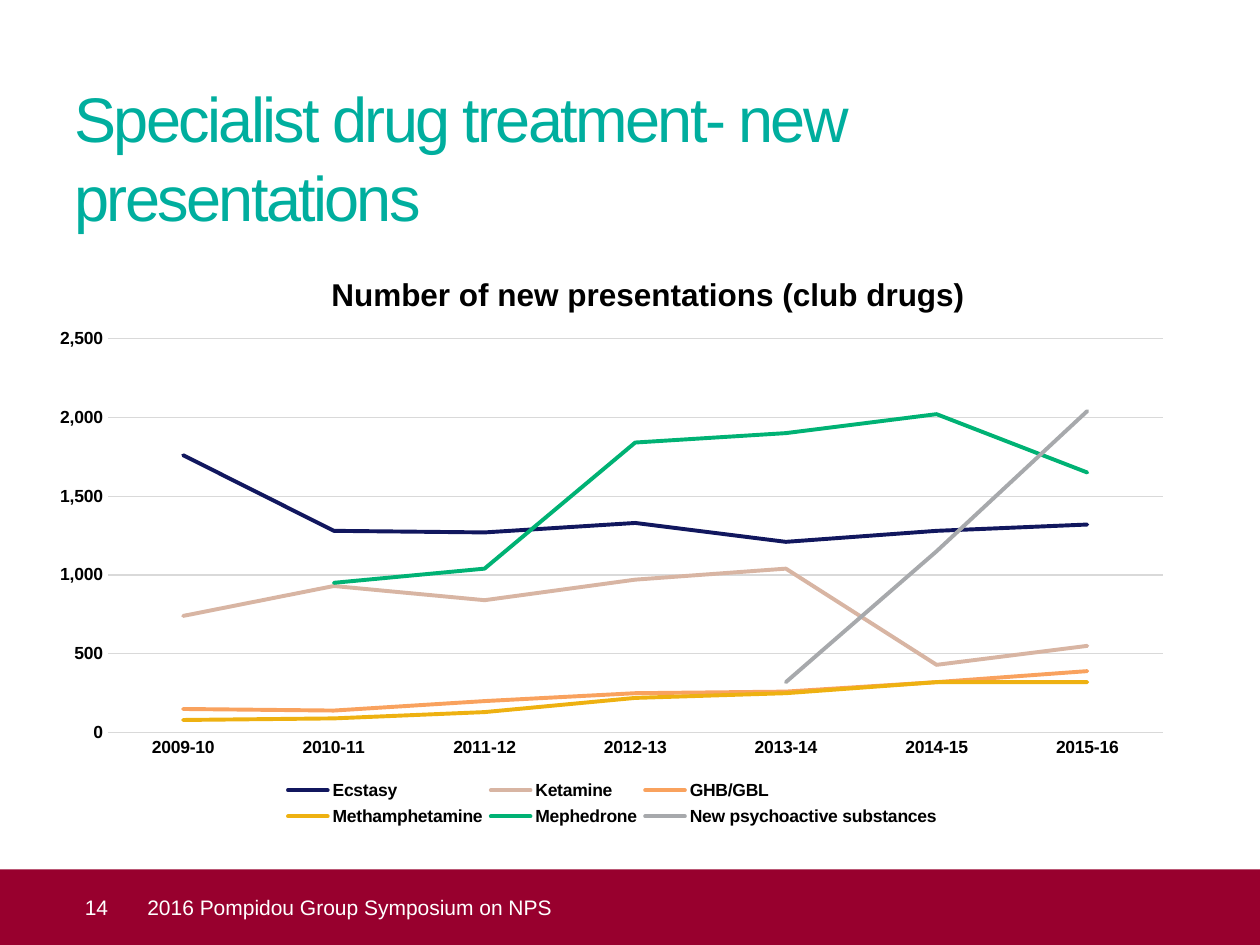
from lxml import etree
from pptx import Presentation
from pptx.chart.data import CategoryChartData
from pptx.dml.color import RGBColor
from pptx.enum.chart import XL_CHART_TYPE as CT, XL_LEGEND_POSITION as LP
from pptx.enum.chart import XL_MARKER_STYLE as MS, XL_TICK_MARK as TM
from pptx.enum.shapes import MSO_SHAPE
from pptx.enum.text import MSO_ANCHOR, MSO_AUTO_SIZE, PP_ALIGN
from pptx.oxml.ns import qn
from pptx.util import Pt

# Content
TITLE = "Specialist drug treatment- new presentations"
NUMBER = "14"
FOOTER = "2016 Pompidou Group Symposium on NPS"
CHART_TITLE = "Number of new presentations (club drugs)"
YEARS = ["2009-10", "2010-11", "2011-12", "2012-13", "2013-14", "2014-15", "2015-16"]
SERIES = [
    ("Ecstasy", RGBColor(0x11, 0x17, 0x5E), [1760, 1280, 1270, 1330, 1210, 1280, 1320]),
    ("Ketamine", RGBColor(0xD8, 0xB5, 0xA3), [740, 930, 840, 970, 1040, 430, 550]),
    ("GHB/GBL", RGBColor(0xF9, 0xA2, 0x5E), [150, 140, 200, 250, 260, 320, 390]),
    ("Methamphetamine", RGBColor(0xEE, 0xB1, 0x11), [80, 90, 130, 220, 250, 320, 320]),
    ("Mephedrone", RGBColor(0x00, 0xB2, 0x74), [None, 950, 1040, 1840, 1900, 2020, 1650]),
    ("New psychoactive substances", RGBColor(0xA7, 0xA9, 0xAC),
     [None, None, None, None, 320, 1150, 2040]),
]

TEAL = RGBColor(0x00, 0xAE, 0x9E)
CRIMSON = RGBColor(0x98, 0x00, 0x2E)
WHITE = RGBColor(0xFF, 0xFF, 0xFF)
BLACK = RGBColor(0x00, 0x00, 0x00)
GRID = RGBColor(0xD9, 0xD9, 0xD9)
FONT = "Arial"
WIDTH, HEIGHT, BAR_H = 720, 540, 43.2


def style(font, size, color, bold=False):
    font.name, font.size, font.bold = FONT, Pt(size), bold
    font.color.rgb = color


def write(sp, text, size, color, left=0, anchor=MSO_ANCHOR.MIDDLE):
    tf = sp.text_frame
    tf.word_wrap, tf.auto_size, tf.vertical_anchor = True, MSO_AUTO_SIZE.NONE, anchor
    tf.margin_left = Pt(left)
    tf.margin_top = tf.margin_right = tf.margin_bottom = 0
    p = tf.paragraphs[0]
    p.alignment = PP_ALIGN.LEFT
    r = p.add_run()
    r.text = text
    style(r.font, size, color)
    return p, r


def place(parent, after=None, **box):
    """Give a chart part a manual layout, as fractions of the chart."""
    for old in parent.findall(qn("c:layout")):
        parent.remove(old)
    layout = etree.Element(qn("c:layout"))
    manual = etree.SubElement(layout, qn("c:manualLayout"))
    if after is None:
        etree.SubElement(manual, qn("c:layoutTarget")).set("val", "inner")
        parent.insert(0, layout)
    else:
        parent.find(qn(after)).addnext(layout)
    for mode in ("xMode", "yMode"):
        etree.SubElement(manual, qn(f"c:{mode}")).set("val", "edge")
    for key, value in box.items():
        etree.SubElement(manual, qn(f"c:{key}")).set("val", str(value))


prs = Presentation()
prs.slide_width, prs.slide_height = Pt(WIDTH), Pt(HEIGHT)
s = prs.slides.add_slide(prs.slide_layouts[5])

# Title
title = s.shapes.title
title.left, title.top, title.width, title.height = Pt(42.5), Pt(43.2), Pt(646.5), Pt(51)
p, r = write(title, TITLE, 36, TEAL, anchor=MSO_ANCHOR.TOP)
p.line_spacing = 1.05
r.font._element.set("spc", "-150")

# Footer bar with slide number, and footer text
bar = s.shapes.add_shape(MSO_SHAPE.RECTANGLE, 0, Pt(HEIGHT - BAR_H), Pt(WIDTH), Pt(BAR_H))
bar.shadow.inherit = False
bar.fill.solid()
bar.fill.fore_color.rgb = CRIMSON
bar.line.fill.background()
write(bar, NUMBER, 12, WHITE, left=48.5)
footer = s.shapes.add_textbox(Pt(70.5), Pt(HEIGHT - BAR_H), Pt(635), Pt(BAR_H))
write(footer, FOOTER, 12, WHITE, left=13.7)

# Line chart
data = CategoryChartData(number_format="#,##0")
data.categories = YEARS
for name, _, values in SERIES:
    data.add_series(name, values)
chart = s.shapes.add_chart(CT.LINE, Pt(22.3), Pt(139.7), Pt(655.2), Pt(336.2), data).chart
style(chart.font, 10, BLACK, True)

chart.has_title = True
r = chart.chart_title.text_frame.paragraphs[0].add_run()
r.text = CHART_TITLE
style(r.font, 18, BLACK, True)

chart.has_legend = True
chart.legend.position = LP.BOTTOM
chart.legend.include_in_layout = False

plot = chart.plots[0]
plot.vary_by_categories = False
for ser, (_, color, _) in zip(plot.series, SERIES):
    ser.smooth = False
    ser.marker.style = MS.NONE
    ser.format.line.width = Pt(2.25)
    ser.format.line.color.rgb = color
    ser.format.line._ln.set("cap", "rnd")

# Axes
cat, val = chart.category_axis, chart.value_axis
val.minimum_scale, val.maximum_scale, val.major_unit = 0, 2500, 500
val.has_major_gridlines = True
val.tick_labels.number_format = "#,##0"
val.tick_labels.number_format_is_linked = False
for axis in (cat, val):
    axis.major_tick_mark = axis.minor_tick_mark = TM.NONE
for line in (cat.format.line, val.major_gridlines.format.line):
    line.color.rgb, line.width = GRID, Pt(0.75)
val.format.line.fill.background()

# Positions of the chart parts
place(chart.chart_title._element, "c:tx", x=0.25, y=0.04)
place(chart.legend._element, "c:legendPos", x=0.21, y=0.9, w=0.58, h=0.1)
plot_area = chart._chartSpace.find(qn("c:chart")).find(qn("c:plotArea"))
place(plot_area, x=0.06, y=0.16, w=0.92, h=0.67)

prs.save("out.pptx")
